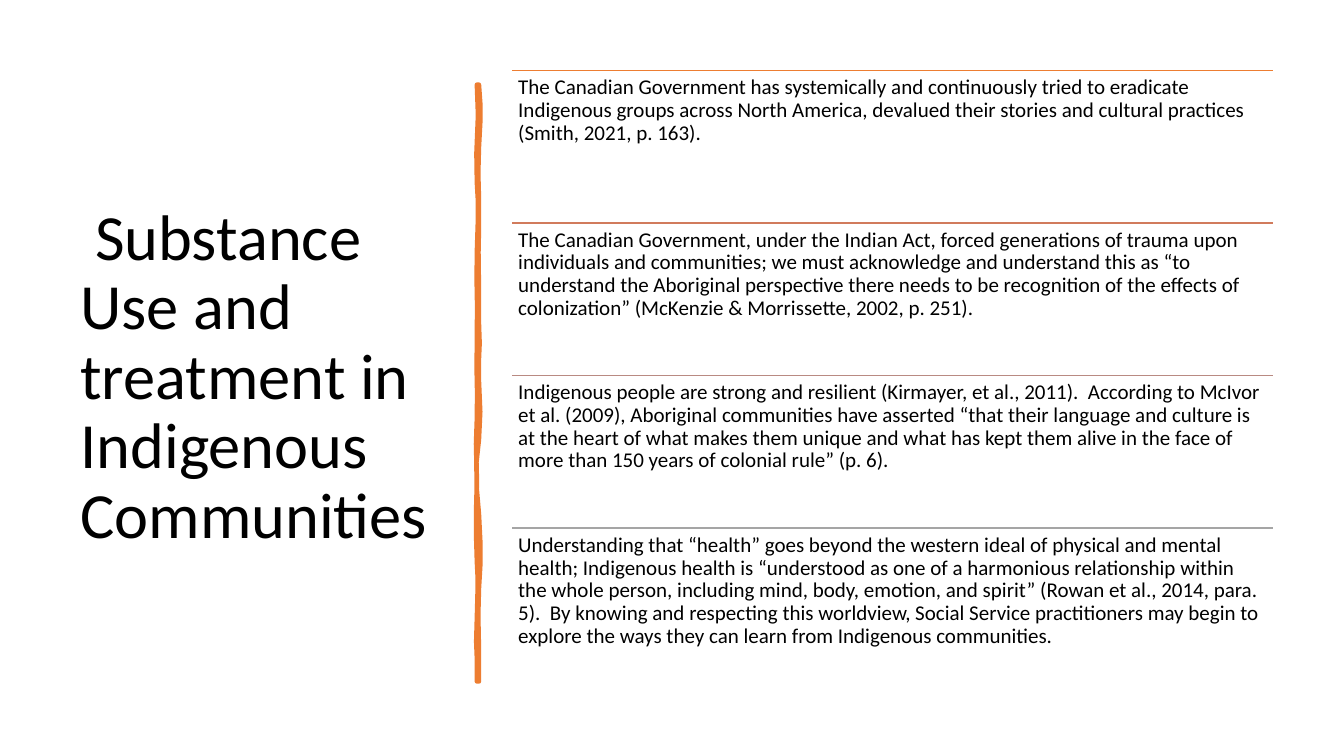
import pptx
import pptx.dml.color
import pptx.enum.shapes
import pptx.enum.text
import pptx.oxml
import pptx.util
from pptx.util import Inches

RGBColor = pptx.dml.color.RGBColor
ORANGE = RGBColor(0xED, 0x7D, 0x31)
COPPER = RGBColor(0xD1, 0x7B, 0x5C)
DUSTY_ROSE = RGBColor(0xB9, 0x8A, 0x82)
GREY = RGBColor(0xA5, 0xA5, 0xA5)
BLACK = RGBColor(0x00, 0x00, 0x00)

TITLE = " Substance Use and treatment in Indigenous Communities"
STATEMENTS = [
    (ORANGE, "The Canadian Government has systemically and continuously tried to "
     "eradicate Indigenous groups across North America, devalued their stories and "
     "cultural practices (Smith, 2021, p. 163)."),
    (COPPER, "The Canadian Government, under the Indian Act, forced generations of "
     "trauma upon individuals and communities; we must acknowledge and understand "
     "this as “to understand the Aboriginal perspective there needs to be "
     "recognition of the effects of colonization” (McKenzie & Morrissette, 2002, "
     "p. 251)."),
    (DUSTY_ROSE, "Indigenous people are strong and resilient (Kirmayer, et al., "
     "2011).  According to McIvor et al. (2009), Aboriginal communities have "
     "asserted “that their language and culture is at the heart of what makes them "
     "unique and what has kept them alive in the face of more than 150 years of "
     "colonial rule” (p. 6)."),
    (GREY, "Understanding that “health” goes beyond the western ideal of physical "
     "and mental health; Indigenous health is “understood as one of a harmonious "
     "relationship within the whole person, including mind, body, emotion, and "
     "spirit” (Rowan et al., 2014, para. 5).  By knowing and respecting this "
     "worldview, Social Service practitioners may begin to explore the ways they "
     "can learn from Indigenous communities."),
]
LIST_LEFT, LIST_TOP, LIST_WIDTH = 5.08, 0.7, 7.55
ROW_PITCH = (5.24 - LIST_TOP) / 3

# Bezier segments of the brush stroke: two control points, then the end point.
STROKE_START = (4.75, 0.84)
STROKE_CURVES = [
    ((4.77, 1.02), (4.77, 1.19), (4.75, 1.46)),
    ((4.73, 1.73), (4.76, 1.95), (4.75, 2.26)),
    ((4.74, 2.57), (4.75, 2.62), (4.75, 2.94)),
    ((4.74, 3.25), (4.77, 3.42), (4.75, 3.56)),
    ((4.73, 3.7), (4.79, 4.14), (4.75, 4.36)),
    ((4.71, 4.57), (4.72, 4.84), (4.75, 5.1)),
    ((4.77, 5.36), (4.77, 5.64), (4.75, 5.84)),
    ((4.73, 6.03), (4.76, 6.5), (4.75, 6.76)),
    ((4.74, 6.76), (4.73, 6.76), (4.73, 6.76)),
    ((4.74, 6.46), (4.71, 6.44), (4.73, 6.13)),
    ((4.74, 5.83), (4.74, 5.7), (4.73, 5.57)),
    ((4.72, 5.44), (4.72, 4.95), (4.73, 4.77)),
    ((4.73, 4.59), (4.71, 4.45), (4.73, 4.15)),
    ((4.74, 3.86), (4.72, 3.73), (4.73, 3.35)),
    ((4.74, 2.98), (4.72, 2.81), (4.73, 2.5)),
    ((4.74, 2.18), (4.75, 2), (4.73, 1.81)),
    ((4.7, 1.63), (4.77, 1.04), (4.73, 0.84)),
    ((4.74, 0.84), (4.74, 0.84), STROKE_START),
]
STEPS_PER_CURVE = 3


def add_text(page, text, area, size, inset, anchor):
    box = page.shapes.add_textbox(*(Inches(length) for length in area))
    frame_format = {
        "word_wrap": True,
        "vertical_anchor": anchor,
        "margin_left": Inches(inset[0]),
        "margin_right": Inches(inset[0]),
        "margin_top": Inches(inset[1]),
        "margin_bottom": Inches(inset[1]),
    }
    for name, value in frame_format.items():
        setattr(box.text_frame, name, value)
    para = box.text_frame.paragraphs[0]
    para.line_spacing = 0.9
    span = para.add_run()
    span.text = text
    font_format = {"name": "Calibri", "size": pptx.util.Pt(size)}
    for name, value in font_format.items():
        setattr(span.font, name, value)
    span.font.color.rgb = BLACK


def add_rule(page, left, top, width, color):
    rule = page.shapes.add_connector(
        pptx.enum.shapes.MSO_CONNECTOR.STRAIGHT,
        Inches(left), Inches(top), Inches(left + width), Inches(top))
    rule.line.color.rgb = color
    rule.line.width = pptx.util.Pt(1)
    rule.element.spPr.append(pptx.oxml.parse_xml(
        '<a:effectLst xmlns:a="http://schemas.openxmlformats.org/drawingml/2006/main"/>'))


def curve_points(start, curves):
    """Return points in EMU along a chain of cubic Bezier curves."""
    points = []
    for first, second, end in curves:
        for step in range(1, STEPS_PER_CURVE + 1):
            t = step / STEPS_PER_CURVE
            u = 1 - t
            points.append(tuple(
                Inches(u**3 * a + 3 * u * u * t * b + 3 * u * t * t * c + t**3 * d)
                for a, b, c, d in zip(start, first, second, end)))
        start = end
    return points


def add_brush_stroke(page):
    start = (Inches(length) for length in STROKE_START)
    builder = page.shapes.build_freeform(*start)
    builder.add_line_segments(curve_points(STROKE_START, STROKE_CURVES), close=True)
    stroke = builder.convert_to_shape()
    stroke.shadow.inherit = False
    stroke.fill.solid()
    stroke.fill.fore_color.rgb = ORANGE
    stroke.line.color.rgb = ORANGE
    stroke.line.width = pptx.util.Pt(3.25)
    outline = stroke.element.spPr.find(pptx.oxml.ns.qn("a:ln"))
    outline.set("cap", "rnd")
    outline.append(pptx.oxml.parse_xml(
        '<a:round xmlns:a="http://schemas.openxmlformats.org/drawingml/2006/main"/>'))


def main():
    deck = pptx.Presentation()
    deck.slide_width, deck.slide_height = Inches(13.33), Inches(7.5)
    page = deck.slides.add_slide(deck.slide_layouts[6])
    anchors = pptx.enum.text.MSO_ANCHOR

    add_text(page, TITLE, (0.7, 0.7, 3.74, 6.11), 46, (0.1, 0.05), anchors.MIDDLE)
    add_brush_stroke(page)
    for row, (color, statement) in enumerate(STATEMENTS):
        top = LIST_TOP + row * ROW_PITCH
        add_rule(page, LIST_LEFT, top, LIST_WIDTH, color)
        add_text(page, statement, (LIST_LEFT, top, LIST_WIDTH, ROW_PITCH),
                 15, (0.06, 0.06), anchors.TOP)
    deck.save("out.pptx")


if __name__ == "__main__":
    main()
